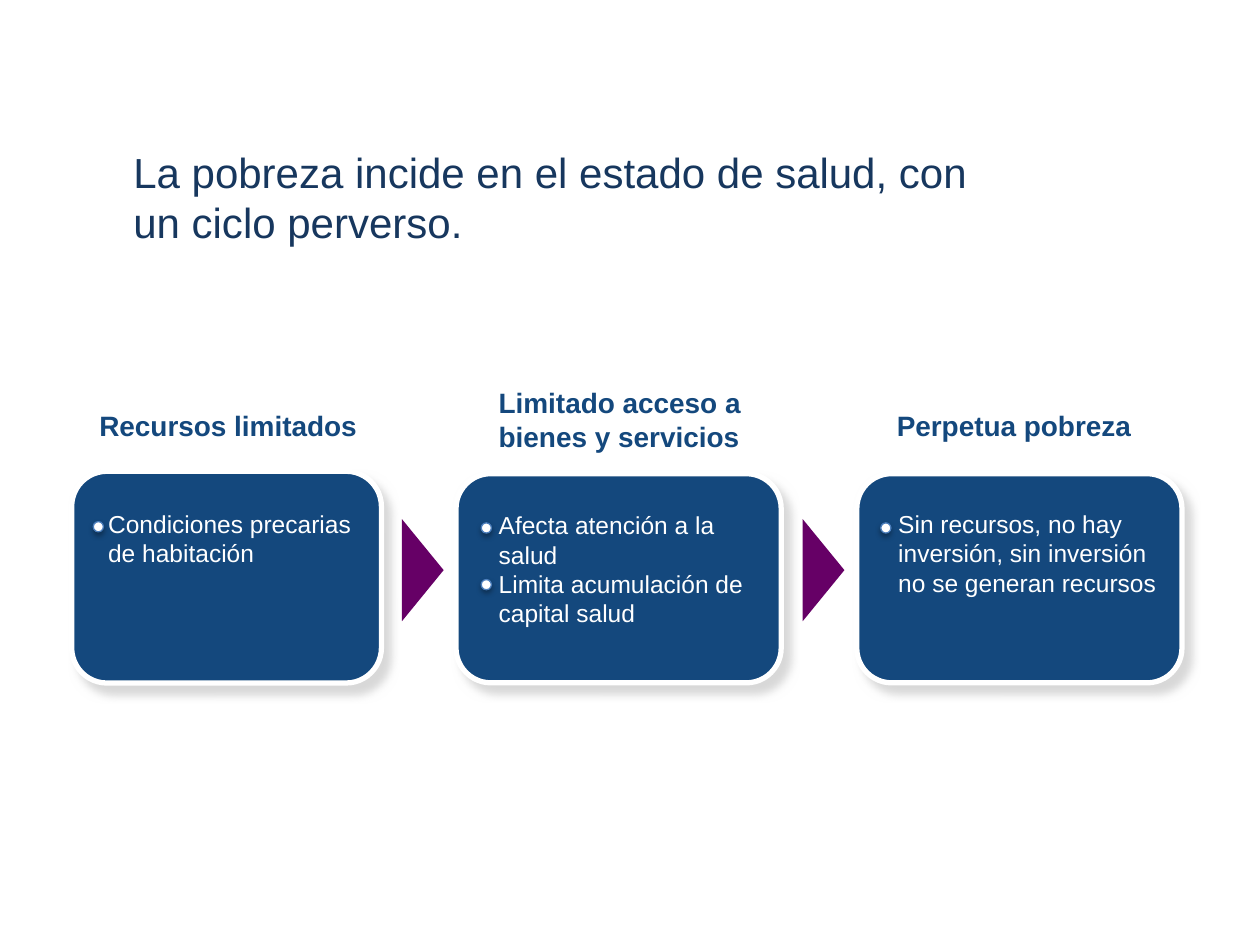
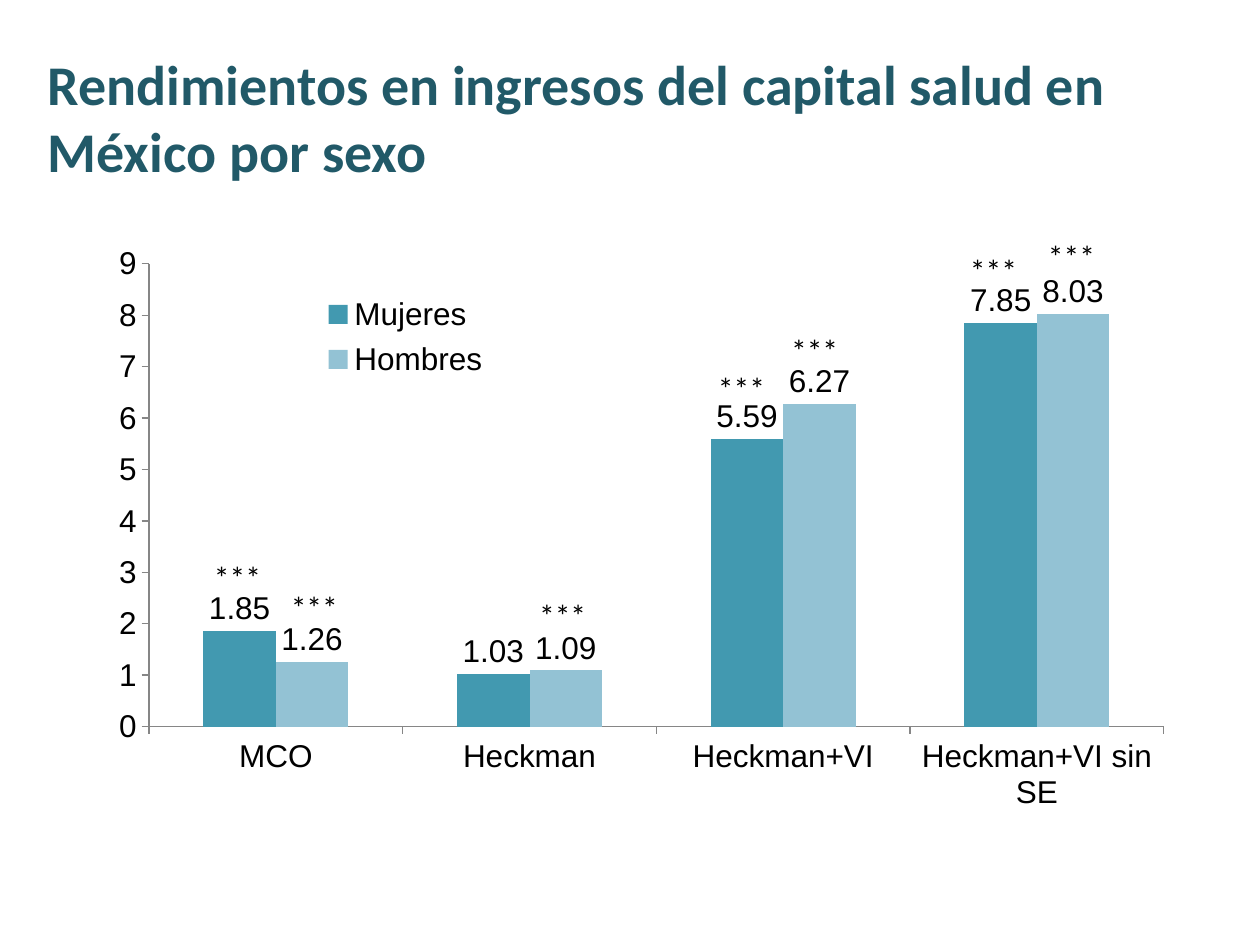
from lxml.etree import SubElement
from pptx import Presentation
from pptx.chart.data import CategoryChartData
from pptx.dml.color import RGBColor
from pptx.enum.chart import XL_CHART_TYPE, XL_LABEL_POSITION, XL_LEGEND_POSITION, XL_TICK_MARK
from pptx.enum.shapes import MSO_SHAPE
from pptx.enum.text import MSO_ANCHOR, MSO_AUTO_SIZE, PP_ALIGN
from pptx.oxml.ns import qn
from pptx.util import Pt

# Shared colours and text styles
NAVY, WHITE, BLACK, PURPLE = "14487D", "FFFFFF", "000000", "660066"
DOT_EDGE, AXIS_GREY = "4B7EBC", "868686"
LEAD = dict(name="Arial", size=24, color="17375E", bold=False)
TITLE = dict(name="Calibri", size=32, color="215968", bold=True)
HEADING = dict(name="Arial", size=16, color=NAVY, bold=True)
CARD_TEXT = dict(name="Arial", size=14, color=WHITE)
STARS = dict(name="Calibri", size=18, color=BLACK)
CHART_TEXT = dict(name="Arial", size=18, color=BLACK)

# Shadows: colour, opacity %, blur, distance, direction in degrees
CARD_SHADOW = ("B2B2B2", 50, 5, 6.4, 51)
DOT_SHADOW = (BLACK, 35, 3.1, 1.8, 90)

# Each card: box, heading (dx, dy, w, h, lines), text (dx, dy, w, h, lines),
# dots (dx, first dy, rows that start an item)
CARDS = [
    dict(box=(41, 269.3, 177, 121),
         heading=(8.7, -39.6, 163.4, 26.6, ["Recursos limitados"]),
         text=(13.7, 18, 163.4, 41, ["Condiciones precarias de habitación"]),
         dots=(12.3, 28.8, [0])),
    dict(box=(260.6, 270.7, 185.8, 119.5),
         heading=(17.3, -54, 155.5, 46, ["Limitado acceso a", "bienes y servicios"]),
         text=(17.3, 17.3, 177.8, 75,
               ["Afecta atención a la", "salud", "Limita acumulación de capital salud"]),
         dots=(14.4, 28.1, [0, 2])),
    dict(box=(489.6, 270.7, 185.8, 119.5),
         heading=(15.8, -41, 150, 26.6, ["Perpetua pobreza"]),
         text=(16.6, 16.6, 177.8, 58.3,
               ["Sin recursos, no hay inversión, sin inversión", "no se generan recursos"]),
         dots=(13.7, 28.1, [0])),
]
ROW, DOT = 16.2, 5.8
ARROW_W, ARROW_H, ARROW_GAP, ARROW_Y = 58.3, 23.8, 19, 325.8

# Chart data, and the places of the significance marks relative to the chart
CATEGORIES = ["MCO", "Heckman", "Heckman+VI", "Heckman+VI sin SE"]
SERIES = [("Mujeres", (1.85, 1.03, 5.59, 7.85), "4299B0"),
          ("Hombres", (1.26, 1.09, 6.27, 8.03), "93C2D4")]
MARKS = [(61.2, 181.4), (105.1, 198.7), (247, 203), (349.2, 73.4),
         (391, 51.8), (493.2, 5.8), (537.8, -2.2)]


def rgb(value):
    return RGBColor.from_string(value)


def set_font(font, style):
    for key, value in style.items():
        if key == "color":
            font.color.rgb = rgb(value)
        else:
            setattr(font, key, Pt(value) if key == "size" else value)


def write(tf, lines, style, wrap=True, anchor=MSO_ANCHOR.TOP):
    for key, value in dict(word_wrap=wrap, auto_size=MSO_AUTO_SIZE.NONE,
                           vertical_anchor=anchor).items():
        setattr(tf, key, value)
    for i, line in enumerate(lines):
        p = tf.paragraphs[0] if i == 0 else tf.add_paragraph()
        p.alignment = PP_ALIGN.LEFT
        r = p.add_run()
        r.text = line
        set_font(r.font, style)


def add_text(s, x, y, w, h, lines, style, wrap=True):
    tb = s.shapes.add_textbox(Pt(x), Pt(y), Pt(w), Pt(h))
    write(tb.text_frame, lines, style, wrap)


def set_title(s, box, lines, style, anchor):
    title = s.shapes.title
    for key, value in zip(("left", "top", "width", "height"), box):
        setattr(title, key, Pt(value))
    write(title.text_frame, lines, style, anchor=anchor)


def add_box(s, kind, x, y, w, h, fill, line=None, shadow=None):
    sp = s.shapes.add_shape(kind, Pt(x), Pt(y), Pt(w), Pt(h))
    sp.fill.solid()
    sp.fill.fore_color.rgb = rgb(fill)
    if line:
        sp.line.color.rgb, sp.line.width = rgb(line[0]), Pt(line[1])
    else:
        sp.line.fill.background()
    sp.shadow.inherit = False
    if shadow:
        color, alpha, blur, dist, angle = shadow
        effects = sp._element.spPr.find(qn("a:effectLst"))
        outer = SubElement(effects, qn("a:outerShdw"), blurRad=str(Pt(blur)),
                           dist=str(Pt(dist)), dir=str(angle * 60000),
                           algn="ctr", rotWithShape="0")
        clr = SubElement(outer, qn("a:srgbClr"), val=color)
        SubElement(clr, qn("a:alpha"), val=str(alpha * 1000))
    return sp


def add_card(s, box, heading, text, dots):
    x, y, w, h = box
    add_box(s, MSO_SHAPE.FLOWCHART_ALTERNATE_PROCESS, x, y, w, h, NAVY,
            (WHITE, 3), CARD_SHADOW)
    for part, style, wrap in ((heading, HEADING, False), (text, CARD_TEXT, True)):
        dx, dy, pw, ph, lines = part
        add_text(s, x + dx, y + dy, pw, ph, lines, style, wrap)
    dx, dy, rows = dots
    for row in rows:
        add_box(s, MSO_SHAPE.OVAL, x + dx, y + dy + row * ROW, DOT, DOT, WHITE,
                (DOT_EDGE, 0.75), DOT_SHADOW)


def add_arrow(s, next_left):
    x = next_left - ARROW_GAP - ARROW_W / 2
    sp = add_box(s, MSO_SHAPE.ISOSCELES_TRIANGLE, x, ARROW_Y - ARROW_H / 2,
                 ARROW_W, ARROW_H, PURPLE)
    sp.rotation = 90


def set_layout(element, position, inner=False):
    """Place a chart part by fractions of the chart's box."""
    old = element.find(qn("c:layout"))
    if old is not None:
        element.remove(old)
    layout = element.makeelement(qn("c:layout"))
    manual = SubElement(layout, qn("c:manualLayout"))
    if inner:
        SubElement(manual, qn("c:layoutTarget"), val="inner")
    for key in ("xMode", "yMode"):
        SubElement(manual, qn("c:" + key), val="edge")
    for key, value in zip("xywh", position):
        SubElement(manual, qn("c:" + key), val=str(value))
    element.insert(0 if inner else 1, layout)


def add_returns_chart(s, x, y, w, h):
    data = CategoryChartData()
    data.categories = CATEGORIES
    for name, values, _ in SERIES:
        data.add_series(name, values)
    chart = s.shapes.add_chart(XL_CHART_TYPE.COLUMN_CLUSTERED, Pt(x), Pt(y),
                               Pt(w), Pt(h), data).chart
    set_font(chart.font, CHART_TEXT)
    chart.has_title = False
    plot = chart.plots[0]
    plot.gap_width, plot.overlap, plot.vary_by_categories = 150, 0, False
    for series, (_, _, color) in zip(plot.series, SERIES):
        series.format.fill.solid()
        series.format.fill.fore_color.rgb = rgb(color)
        labels = series.data_labels
        labels.show_value = True
        labels.position = XL_LABEL_POSITION.OUTSIDE_END
        set_font(labels.font, CHART_TEXT)

    # Axes
    for axis in (chart.category_axis, chart.value_axis):
        axis.has_major_gridlines = False
        axis.major_tick_mark = XL_TICK_MARK.OUTSIDE
        axis.format.line.color.rgb = rgb(AXIS_GREY)
        set_font(axis.tick_labels.font, CHART_TEXT)
    for key, value in dict(minimum_scale=0, maximum_scale=9, major_unit=1).items():
        setattr(chart.value_axis, key, value)

    # Legend lies over the plot
    chart.has_legend = True
    chart.legend.position = XL_LEGEND_POSITION.RIGHT
    chart.legend.include_in_layout = True
    set_font(chart.legend.font, CHART_TEXT)
    set_layout(chart.legend._element, (0.2, 0.09, 0.17, 0.17))
    set_layout(chart._chartSpace.chart.plotArea, (0.05, 0.05, 0.93, 0.79), inner=True)

    # Significance marks
    for dx, dy in MARKS:
        add_text(s, x + dx, y + dy, 42, 29, ["***"], STARS, wrap=False)


def poverty_slide(prs):
    s = prs.slides.add_slide(prs.slide_layouts[5])
    set_title(s, (69, 80, 568, 65.5),
              ["La pobreza incide en el estado de salud, con", "un ciclo perverso."],
              LEAD, MSO_ANCHOR.TOP)
    for card in CARDS:
        add_card(s, **card)
    for card in CARDS[1:]:
        add_arrow(s, card["box"][0])


def returns_slide(prs):
    s = prs.slides.add_slide(prs.slide_layouts[5])
    set_title(s, (20, 21.6, 646.6, 90),
              ["Rendimientos en ingresos del capital salud en México por sexo"],
              TITLE, MSO_ANCHOR.MIDDLE)
    add_returns_chart(s, 54, 134, 623.5, 334.8)


def main():
    prs = Presentation()
    prs.slide_width, prs.slide_height = Pt(720), Pt(540)
    poverty_slide(prs)
    returns_slide(prs)
    prs.save("out.pptx")


if __name__ == "__main__":
    main()
